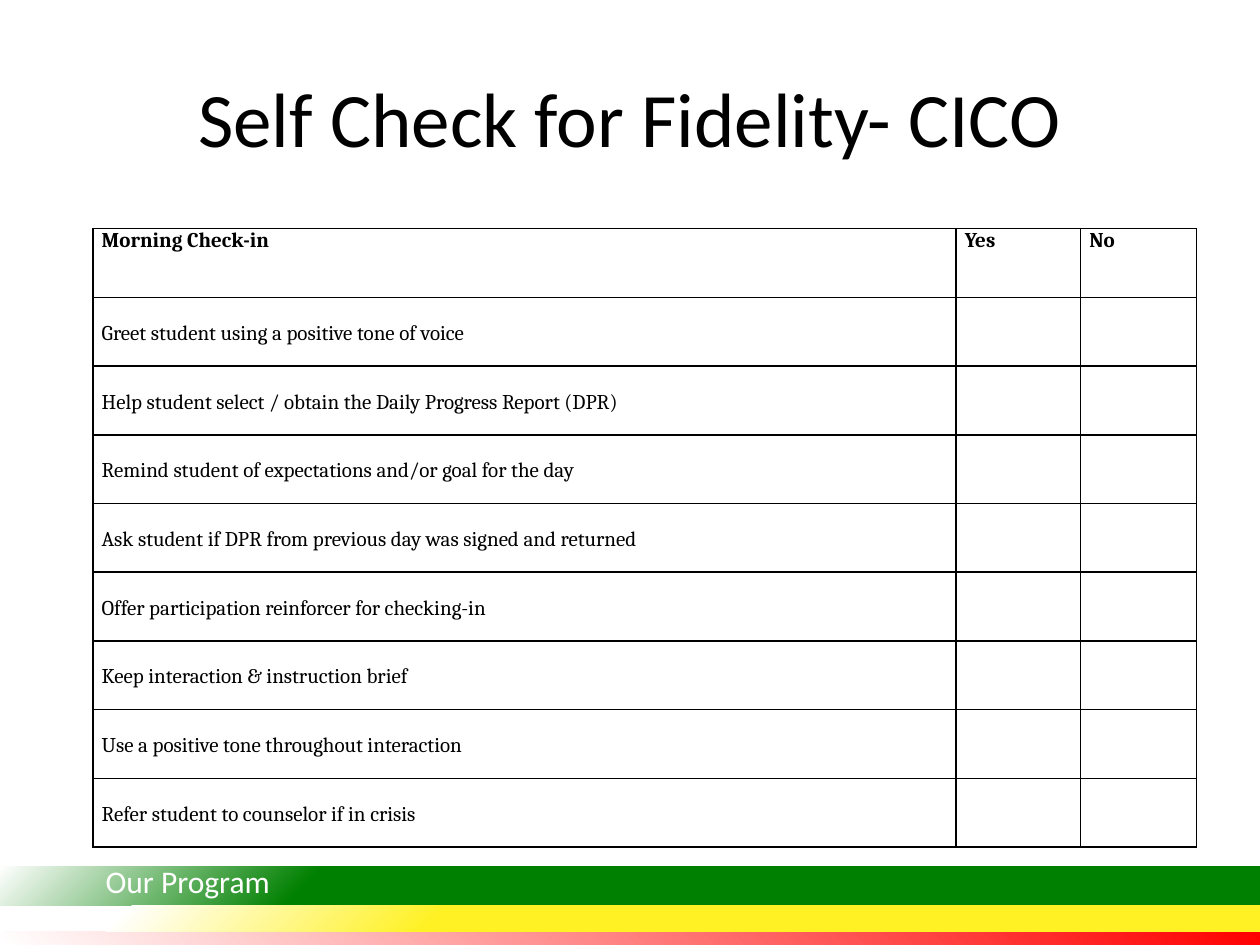
from dataclasses import dataclass
from typing import Any

from lxml import etree
from pptx import Presentation
from pptx import util as u
from pptx.dml import color
from pptx.enum import shapes, text
from pptx.oxml import ns

COLORS = {
    "black": "000000",
    "white": "FFFFFF",
    "green": "008000",
    "yellow": "FFF123",
    "red": "FF0000",
}
SLIDE_WIDTH = u.Cm(25.4)
SLIDE_HEIGHT = u.Cm(19.05)
COLUMN_WIDTHS = (17.4, 2.51, 2.34)
HEADERS = ("Morning Check-in", "Yes", "No")
CHECKS = (
    "Greet student using a positive tone of voice",
    "Help student select / obtain the Daily Progress Report (DPR)",
    "Remind student of expectations and/or goal for the day",
    "Ask student if DPR from previous day was signed and returned",
    "Offer participation reinforcer for checking-in",
    "Keep interaction & instruction brief",
    "Use a positive tone throughout interaction",
    "Refer student to counselor if in crisis",
)
TITLE_FONT = {"name": "Calibri", "size": u.Pt(44)}
LABEL_FONT = {"name": "Calibri", "size": u.Pt(18)}
CELL_FONT = {"name": "Cambria", "size": u.Pt(12)}
CELL_MARGINS = {
    "margin_left": u.Cm(0.18),
    "margin_right": u.Cm(0.18),
    "margin_bottom": u.Cm(0),
}


@dataclass(frozen=True)
class Band:
    top: float
    height: float
    color: str
    solid_until: int
    white_from: int
    focus_edge: str


BANDS = (
    Band(18.77, 0.3, "red", 0, 100, "b"),
    Band(17.46, 0.8, "green", 75, 100, "t"),
    Band(18.26, 0.51, "yellow", 65, 90, "t"),
)


def apply(target: Any, values: dict[str, Any]) -> None:
    for name, value in values.items():
        setattr(target, name, value)


def add_element(parent: Any, tag: str, **attributes: str) -> Any:
    return etree.SubElement(parent, ns.qn(tag), attributes)


def write(frame: Any, content: str, font: dict[str, Any], color_name: str) -> None:
    run = frame.paragraphs[0].add_run()
    run.text = content
    apply(run.font, font)
    run.font.color.rgb = color.RGBColor.from_string(COLORS[color_name])


def add_band(slide: Any, band: Band) -> None:
    shape = slide.shapes.add_shape(
        shapes.MSO_SHAPE.RECTANGLE, 0, u.Cm(band.top), SLIDE_WIDTH, u.Cm(band.height)
    )
    shape.shadow.inherit = False
    shape.line.fill.background()
    gradient = etree.Element(ns.qn("a:gradFill"), rotWithShape="1")
    stops = add_element(gradient, "a:gsLst")
    for position, name in ((band.solid_until, band.color), (band.white_from, "white")):
        stop = add_element(stops, "a:gs", pos=str(position * 1000))
        add_element(stop, "a:srgbClr", val=COLORS[name])
    circle = add_element(gradient, "a:path", path="circle")
    add_element(circle, "a:fillToRect", **{"l": "100000", band.focus_edge: "100000"})
    shape.element.spPr.find(ns.qn("a:prstGeom")).addnext(gradient)


def add_label(slide: Any) -> None:
    box = slide.shapes.add_textbox(u.Cm(1.88), u.Cm(17.25), u.Cm(4.88), u.Cm(1.02))
    box.text_frame.word_wrap = True
    write(box.text_frame, "Our Program", LABEL_FONT, "white")


def format_cell(cell: Any) -> None:
    apply(cell, CELL_MARGINS)
    cell.fill.background()
    properties = cell._tc.get_or_add_tcPr()
    for index, tag in enumerate(("a:lnL", "a:lnR", "a:lnT", "a:lnB")):
        line = etree.Element(ns.qn(tag), w=str(u.Pt(1)))
        fill = add_element(line, "a:solidFill")
        add_element(fill, "a:srgbClr", val=COLORS["black"])
        properties.insert(index, line)


def add_checklist(slide: Any) -> None:
    rows = (HEADERS, *((check, "", "") for check in CHECKS))
    table = slide.shapes.add_table(
        len(rows), len(HEADERS),
        u.Cm(1.87), u.Cm(4.61), u.Cm(sum(COLUMN_WIDTHS)), u.Cm(12.47),
    ).table
    apply(table, {"first_row": False, "horz_banding": False})
    for column, width in zip(table.columns, COLUMN_WIDTHS):
        column.width = u.Cm(width)
    for row_index, row in enumerate(rows):
        is_header = row_index == 0
        for column_index, content in enumerate(row):
            cell = table.cell(row_index, column_index)
            format_cell(cell)
            cell.margin_top = u.Cm(0 if is_header else 0.07)
            cell.vertical_anchor = (
                text.MSO_ANCHOR.TOP if is_header else text.MSO_ANCHOR.MIDDLE
            )
            if content:
                font = {**CELL_FONT, "bold": is_header}
                write(cell.text_frame, content, font, "black")


def add_title(slide: Any) -> None:
    title = slide.shapes.title
    apply(title, {
        "left": u.Cm(1.27), "top": u.Cm(0.76),
        "width": u.Cm(22.86), "height": u.Cm(3.18),
    })
    title.text_frame.vertical_anchor = text.MSO_ANCHOR.MIDDLE
    title.text_frame.paragraphs[0].alignment = text.PP_ALIGN.CENTER
    write(title.text_frame, "Self Check for Fidelity- CICO", TITLE_FONT, "black")


def main() -> None:
    presentation = Presentation()
    apply(presentation, {"slide_width": SLIDE_WIDTH, "slide_height": SLIDE_HEIGHT})
    slide = presentation.slides.add_slide(presentation.slide_layouts[5])
    for band in BANDS:
        add_band(slide, band)
    add_label(slide)
    add_title(slide)
    add_checklist(slide)
    presentation.save("out.pptx")


if __name__ == "__main__":
    main()
